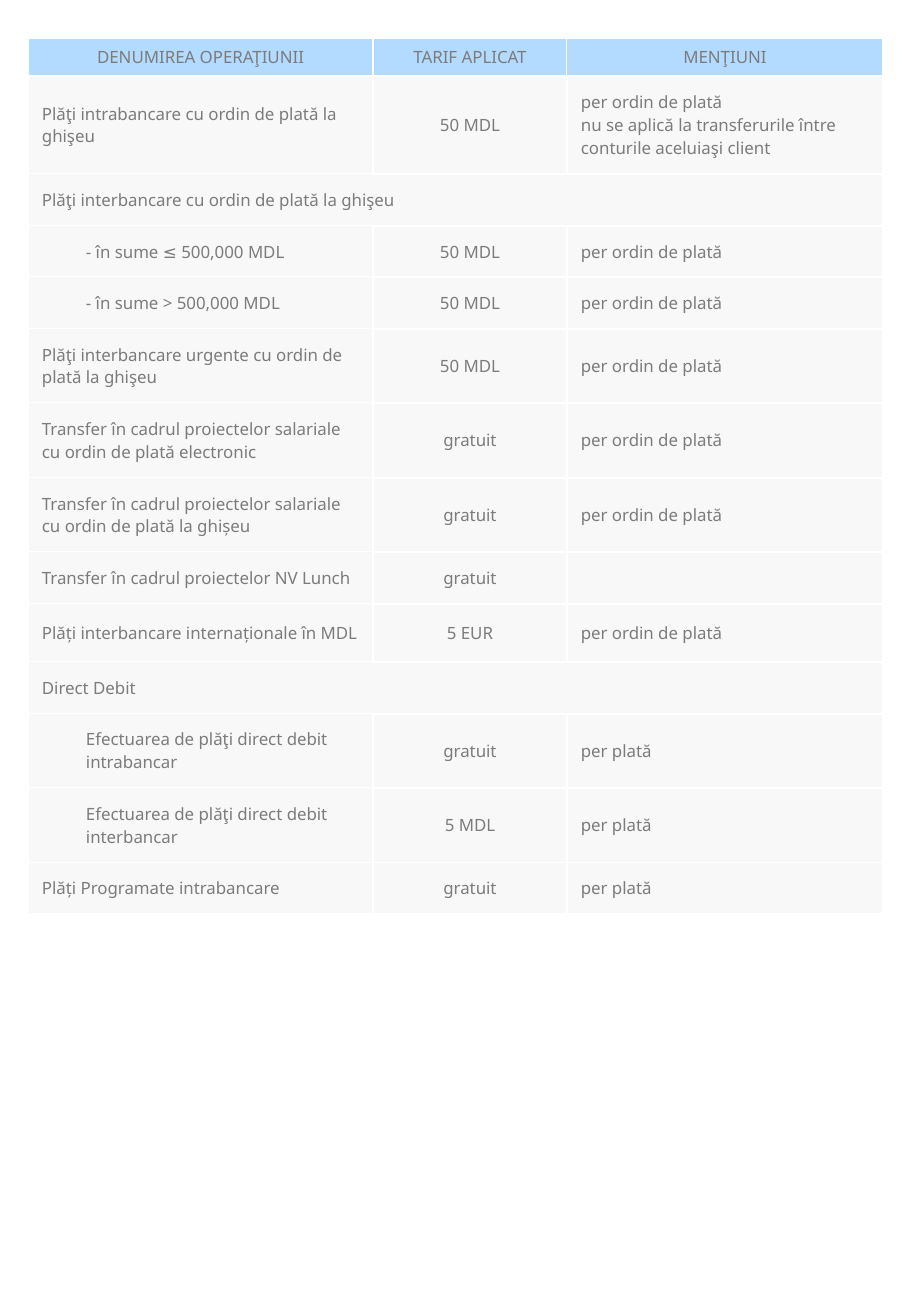
from lxml import etree
from pptx import Presentation
from pptx.dml.color import RGBColor
from pptx.enum.text import MSO_ANCHOR, PP_ALIGN
from pptx.oxml.ns import qn
from pptx.util import Pt

MIDDLE = MSO_ANCHOR.MIDDLE
LEFT, CENTER = PP_ALIGN.LEFT, PP_ALIGN.CENTER
PX = 7526  # EMU in one px
PAGE_WIDTH, PAGE_HEIGHT = 911, 1316
TABLE_LEFT, TABLE_TOP = 28, 38
COLUMN_WIDTHS = [345, 194, 316]
INDENT = 44

HEADINGS = ["DENUMIREA OPERAŢIUNII", "TARIF APLICAT", "MENŢIUNI"]
HEADING_HEIGHT = 38
ORDER, PAYMENT = "per ordin de plată", "per plată"

# Row height, indent of the first cell, then the texts; a lone text spans the row.
TARIFFS = [
    (98, 0, "Plăţi intrabancare cu ordin de plată la ghişeu", "50 MDL",
     ORDER + "\nnu se aplică la transferurile între conturile aceluiaşi client"),
    (52, 0, "Plăţi interbancare cu ordin de plată la ghişeu"),
    (51, INDENT, "- în sume ≤ 500,000 MDL", "50 MDL", ORDER),
    (52, INDENT, "- în sume > 500,000 MDL", "50 MDL", ORDER),
    (74, 0, "Plăţi interbancare urgente cu ordin de plată la ghişeu", "50 MDL", ORDER),
    (75, 0, "Transfer în cadrul proiectelor salariale cu ordin de plată electronic",
     "gratuit", ORDER),
    (74, 0, "Transfer în cadrul proiectelor salariale cu ordin de plată la ghișeu",
     "gratuit", ORDER),
    (52, 0, "Transfer în cadrul proiectelor NV Lunch", "gratuit", ""),
    (58, 0, "Plăți interbancare internaționale în MDL", "5 EUR", ORDER),
    (52, 0, "Direct Debit"),
    (74, INDENT, "Efectuarea de plăţi direct debit\nintrabancar", "gratuit", PAYMENT),
    (75, INDENT, "Efectuarea de plăţi direct debit\ninterbancar", "5 MDL", PAYMENT),
    (51, 0, "Plăți Programate intrabancare", "gratuit", PAYMENT),
]


def px(length):
    return length * PX


def color(value):
    return RGBColor.from_string(value)


class TariffPage:
    font = "Noto Sans"
    size = 10
    text_color = "7C7C7C"
    border_color = "FFFFFF"
    heading_fill = ("0088FF", 30)
    body_fill = ("F2F2F2", 50)

    def __init__(self, deck):
        self.page = deck.slides.add_slide(deck.slide_layouts[6])

    def fill_text(self, cell, text, align=LEFT, indent=0, inset=14):
        cell.vertical_anchor = MIDDLE
        cell.margin_left = cell.margin_right = px(inset)
        cell.margin_top = cell.margin_bottom = px(inset)
        for index, line in enumerate(text.split("\n")):
            frame = cell.text_frame
            para = frame.add_paragraph() if index else frame.paragraphs[0]
            para.alignment = align
            if indent:
                para._p.get_or_add_pPr().set("marL", str(px(indent)))
            span = para.add_run()
            span.text = line
            span.font.name = self.font
            span.font.size = Pt(self.size)
            span.font.color.rgb = color(self.text_color)

    def paint(self, cell, fill, border):
        """Give a cell a (colour, opacity percent) fill and four equal borders."""
        value, opacity = fill
        cell.fill.solid()
        cell.fill.fore_color.rgb = color(value)
        properties = cell._tc.get_or_add_tcPr()
        shade = properties.find(qn("a:solidFill")).find(qn("a:srgbClr"))
        etree.SubElement(shade, qn("a:alpha"), val=str(opacity * 1000))
        for index, side in enumerate(("a:lnL", "a:lnR", "a:lnT", "a:lnB")):
            line = etree.Element(qn(side), w=str(Pt(border)))
            solid = etree.SubElement(line, qn("a:solidFill"))
            etree.SubElement(solid, qn("a:srgbClr"), val=self.border_color)
            properties.insert(index, line)

    def table(self, left, top, widths, headings, rows):
        heights = [HEADING_HEIGHT] + [row[0] for row in rows]
        table = self.page.shapes.add_table(
            len(heights), len(widths), px(left), px(top),
            px(sum(widths)), px(sum(heights))).table
        table.first_row = table.horz_banding = False
        for column, width in zip(table.columns, widths):
            column.width = px(width)
        for row, height in zip(table.rows, heights):
            row.height = px(height)

        for index, heading in enumerate(headings):
            cell = table.cell(0, index)
            self.fill_text(cell, heading, align=CENTER, inset=6)
            self.paint(cell, self.heading_fill, 0.75)

        for number, (height, indent, *texts) in enumerate(rows, 1):
            for index in range(len(widths)):
                self.paint(table.cell(number, index), self.body_fill, 1 if index else 0.75)
            if len(texts) == 1:
                table.cell(number, 0).merge(table.cell(number, len(widths) - 1))
            for index, text in enumerate(texts):
                if text:
                    self.fill_text(table.cell(number, index), text,
                                   align=CENTER if index == 1 else LEFT,
                                   indent=0 if index else indent)


def main():
    deck = Presentation()
    deck.slide_width, deck.slide_height = px(PAGE_WIDTH), px(PAGE_HEIGHT)
    tariffs = TariffPage(deck)
    tariffs.table(TABLE_LEFT, TABLE_TOP, COLUMN_WIDTHS, HEADINGS, TARIFFS)
    deck.save("out.pptx")


if __name__ == "__main__":
    main()
